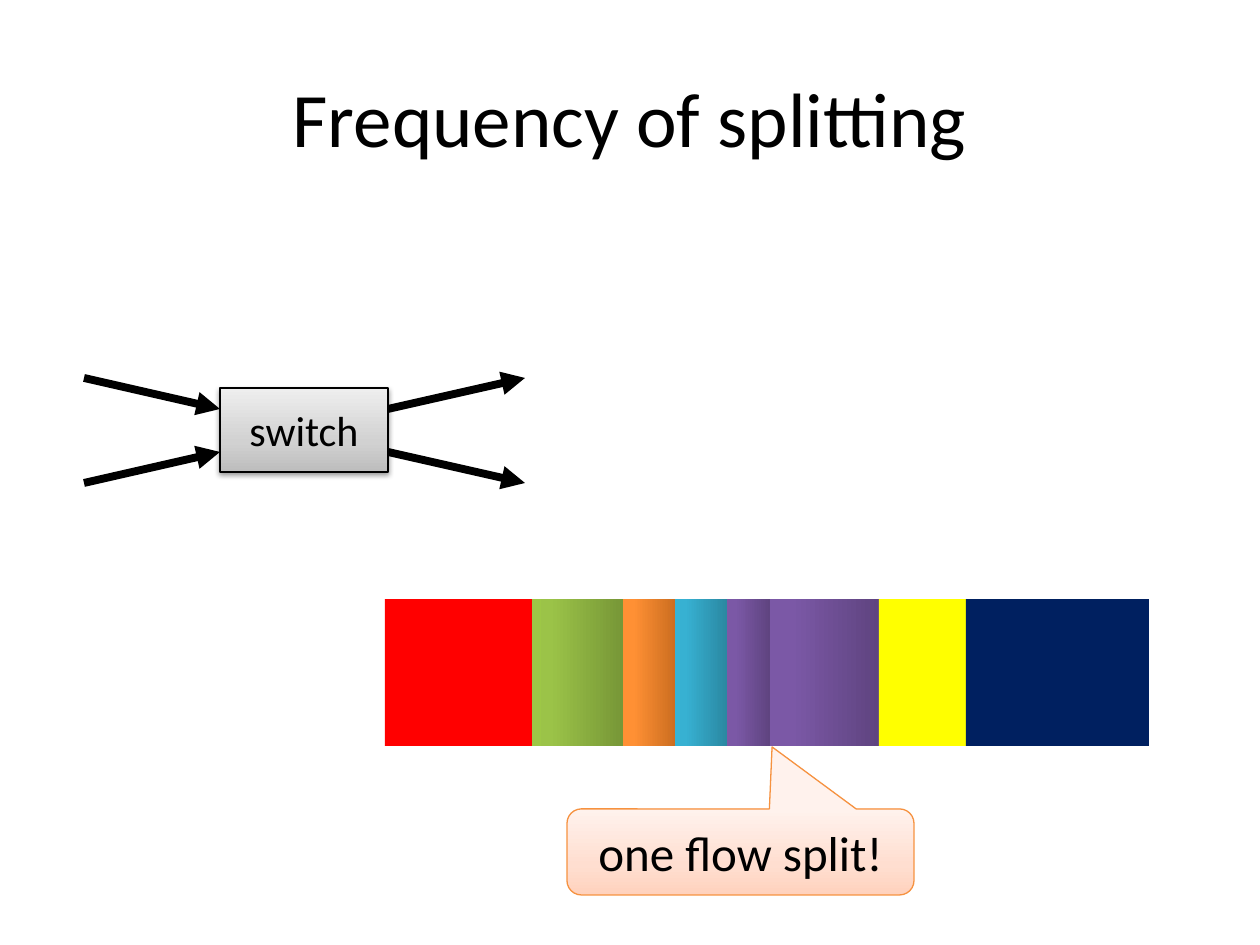
"""Builds the slide on how often flows are split at a switch."""
from copy import deepcopy

from lxml import etree
from pptx import Presentation
from pptx.dml.color import RGBColor
from pptx.enum.shapes import MSO_CONNECTOR, MSO_SHAPE
from pptx.enum.text import MSO_ANCHOR, PP_ALIGN
from pptx.oxml.ns import qn
from pptx.util import Emu, Pt

SCALE = 914400 // 126
RECTANGLE = MSO_SHAPE.RECTANGLE
CALLOUT = MSO_SHAPE.ROUNDED_RECTANGULAR_CALLOUT
STRAIGHT = MSO_CONNECTOR.STRAIGHT

COLORS = {"black": "000000", "red": "FF0000", "yellow": "FFFF00",
          "navy": "002060", "callout line": "F69240"}
GRADIENTS = {
    "green": [(0, "779737"), (0.8, "9BC348"), (1, "9DC746")],
    "orange": [(0, "CC6E20"), (0.8, "FF9034"), (1, "FF9136")],
    "teal": [(0, "2A88A2"), (0.8, "37B1D2"), (1, "34B4D6")],
    "purple": [(0, "5F4480"), (0.8, "7B58A6"), (1, "7C57A8")],
    "gray": [(0, "BDBDBD"), (0.35, "D1D1D1"), (1, "EEEEEE")],
    "peach": [(0, "FFD2BD"), (0.35, "FFDED0"), (1, "FFF2ED")],
}

TITLE = ("Frequency of splitting", (63, 38, 1134, 157), 44)
SWITCH = ("switch", (220, 388, 168, 84), 24)
SPLIT_NOTE = ("one flow split!", (567, 809, 347, 86), 28)
NOTE_ADJUSTMENTS = (0.091, -1.221, 0.167)

BAR_TOP, BAR_HEIGHT = 599, 147
FLOWS = [("red", 144), ("green", 91), ("orange", 52), ("teal", 52)]
LAST_FLOWS = [("yellow", 87), ("navy", 183)]
OVERLAP = ("red", 509, 67)
WHOLE_ROW = (385, FLOWS + [("purple", 151)] + LAST_FLOWS)
FIRST_PART = (388, FLOWS + [("purple", 43)])
SECOND_PART = (770, [("purple", 109)] + LAST_FLOWS)

INPUT_ARROWS = [(84, 483, 220, 452), (84, 378, 220, 409)]
OUTPUT_ARROWS = [(388, 409, 525, 378), (388, 452, 525, 483)]


def px(*values):
    return [Emu(round(value * SCALE)) for value in values]


def rgb(name):
    return RGBColor.from_string(COLORS[name])


def paint(shape, name):
    shape.shadow.inherit = False
    if name in COLORS:
        shape.fill.solid()
        shape.fill.fore_color.rgb = rgb(name)
        return
    shape.fill.gradient()
    shape.fill.gradient_angle = 90
    stop_list = shape._element.spPr.find(qn("a:gradFill")).find(qn("a:gsLst"))
    stop_list.append(deepcopy(stop_list[-1]))
    for stop, (position, color) in zip(shape.fill.gradient_stops, GRADIENTS[name]):
        stop.position = position
        stop.color.rgb = RGBColor.from_string(color)


def write(shape, text, size):
    frame = shape.text_frame
    frame.word_wrap = True
    frame.vertical_anchor = MSO_ANCHOR.MIDDLE
    frame.text = text
    paragraph = frame.paragraphs[0]
    paragraph.alignment = PP_ALIGN.CENTER
    font = paragraph.runs[0].font
    font.name, font.size = "Calibri", Pt(size)
    font.color.rgb = rgb("black")


def add_box(slide, kind, content, fill, line):
    text, bounds, size = content
    shape = slide.shapes.add_shape(kind, *px(*bounds))
    paint(shape, fill)
    shape.line.color.rgb = rgb(line)
    shape.line.width = Pt(0.75)
    write(shape, text, size)
    return shape


def add_bars(slide, start, flows, overlap=None):
    bars = []
    for color, width in flows:
        bars.append((color, start, width))
        start += width
    if overlap:
        bars.insert(1, overlap)
    group = slide.shapes.add_group_shape()
    for color, left, width in bars:
        inset = (BAR_HEIGHT - width) / 2
        bar = group.shapes.add_shape(
            RECTANGLE, *px(left - inset, BAR_TOP + inset, BAR_HEIGHT, width))
        bar.rotation = 270
        paint(bar, color)
        bar.line.fill.background()


def add_arrows(slide, arrows):
    for ends in arrows:
        arrow = slide.shapes.add_connector(STRAIGHT, *px(*ends))
        arrow.line.color.rgb = rgb("black")
        arrow.line.width = Pt(4.5)
        etree.SubElement(arrow.line._get_or_add_ln(), qn("a:tailEnd"), type="triangle")
        etree.SubElement(arrow._element.spPr, qn("a:effectLst"))


def add_shadow(shape):
    effects = shape._element.spPr.find(qn("a:effectLst"))
    shadow = etree.SubElement(
        effects, qn("a:outerShdw"), blurRad=str(Pt(3.1)), dist=str(Pt(1.6)),
        dir="5400000", rotWithShape="0")
    color = etree.SubElement(shadow, qn("a:srgbClr"), val=COLORS["black"])
    etree.SubElement(color, qn("a:alpha"), val="38000")


def main():
    presentation = Presentation()
    presentation.slide_width, presentation.slide_height = px(1260, 945)
    slide = presentation.slides.add_slide(presentation.slide_layouts[6])

    text, bounds, size = TITLE
    write(slide.shapes.add_textbox(*px(*bounds)), text, size)

    add_bars(slide, *WHOLE_ROW, overlap=OVERLAP)
    add_shadow(add_box(slide, RECTANGLE, SWITCH, "gray", "black"))
    add_arrows(slide, INPUT_ARROWS)
    add_bars(slide, *FIRST_PART)
    add_bars(slide, *SECOND_PART)

    note = add_box(slide, CALLOUT, SPLIT_NOTE, "peach", "callout line")
    note.text_frame.margin_left = note.text_frame.margin_right = 0
    for index, value in enumerate(NOTE_ADJUSTMENTS):
        note.adjustments[index] = value
    add_arrows(slide, OUTPUT_ARROWS)

    presentation.save("out.pptx")


if __name__ == "__main__":
    main()
